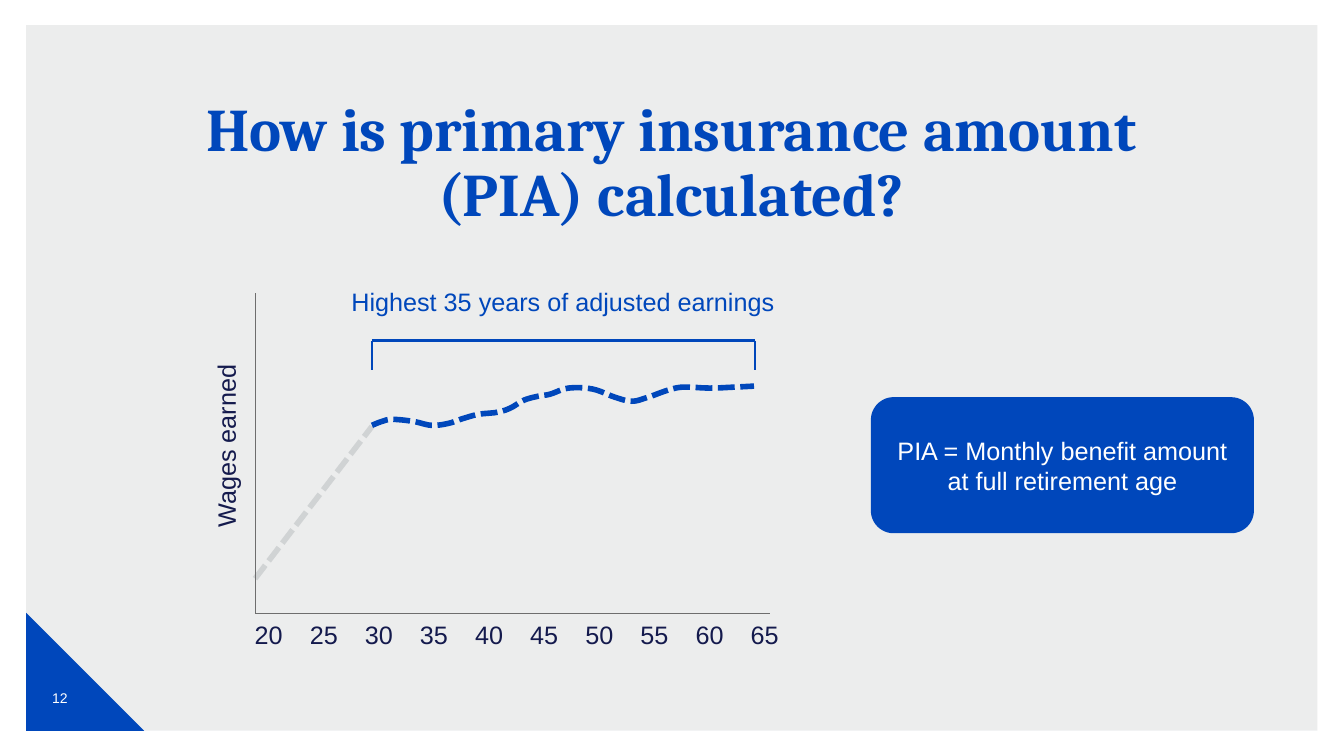
"""Build the slide that explains how the primary insurance amount is calculated."""
from lxml import etree
from pptx import Presentation
from pptx.dml.color import RGBColor
from pptx.enum.dml import MSO_LINE
from pptx.enum.shapes import MSO_CONNECTOR, MSO_SHAPE
from pptx.enum.text import MSO_ANCHOR, PP_ALIGN
from pptx.oxml.ns import qn
from pptx.util import Pt

TITLE = "How is primary insurance amount (PIA) calculated?"
BRACKET_LABEL = "Highest 35 years of adjusted earnings"
WAGES_LABEL = "Wages earned"
DEFINITION = "PIA = Monthly benefit amount at full retirement age"
SLIDE_NUMBER = "12"
AGES = range(20, 70, 5)
EARNINGS = [
    (265.7, 303.8), (272.9, 301), (280.1, 299.5), (295.2, 301), (308.2, 303.8),
    (320.4, 302.4), (331.2, 298.8), (342, 295.9), (355, 294.5), (364.3, 291.6),
    (374.4, 285.8), (384.5, 283), (393.1, 281.5), (406.1, 277.2), (423.4, 277.9),
    (439.2, 283.7), (451.4, 286.6), (463, 283.7), (477.4, 278.6), (488.2, 276.5),
    (506.9, 277.2), (524.9, 276.5), (538.6, 275.8),
]
COLORS = {"blue": "0047BB", "navy": "141A4D", "panel": "D0D3D4",
          "axis": "6E6E6E", "white": "FFFFFF"}

CENTER = PP_ALIGN.CENTER
TOP, MIDDLE = MSO_ANCHOR.TOP, MSO_ANCHOR.MIDDLE
DASH = MSO_LINE.SQUARE_DOT
STRAIGHT = MSO_CONNECTOR.STRAIGHT
RECTANGLE, ROUNDED = MSO_SHAPE.RECTANGLE, MSO_SHAPE.ROUNDED_RECTANGLE
TRIANGLE = MSO_SHAPE.RIGHT_TRIANGLE

AXIS_LEFT, AXIS_RIGHT, AXIS_TOP, AXIS_BOTTOM = 182.2, 550, 209.5, 438.5
BRACKET_LEFT, BRACKET_RIGHT, BRACKET_TOP, BRACKET_BOTTOM = 265.7, 539.3, 243.4, 264.2
AGE_LEFT, AGE_STEP, AGE_SIZE = 177.8, 39.36, 35.3
CURVE_STEPS = 6
CURVE_SCALE = 100


def rgb(name):
    return RGBColor.from_string(COLORS[name])


def write(shape, text, size=18, color="navy", font="Arial", bold=False,
          anchor=TOP, spacing=None, insets=(0, 3.6, 0, 3.6)):
    frame = shape.text_frame
    frame.word_wrap = True
    frame.vertical_anchor = anchor
    (frame.margin_left, frame.margin_top,
     frame.margin_right, frame.margin_bottom) = map(Pt, insets)
    paragraph = frame.paragraphs[0]
    paragraph.alignment = CENTER
    paragraph.line_spacing = spacing
    run = paragraph.add_run()
    run.text = text
    run.font.name = font
    run.font.size = Pt(size)
    run.font.bold = bold
    run.font.color.rgb = rgb(color)


def add_text(slide, box, text, rotation=0, **text_format):
    shape = slide.shapes.add_textbox(*map(Pt, box))
    shape.rotation = rotation
    write(shape, text, **text_format)


def add_block(slide, kind, box, color):
    shape = slide.shapes.add_shape(kind, *map(Pt, box))
    shape.shadow.inherit = False
    shape.fill.solid()
    shape.fill.fore_color.rgb = rgb(color)
    shape.line.fill.background()
    return shape


def style_line(line, color, width, dash=None):
    line.color.rgb = rgb(color)
    line.width = Pt(width)
    if dash:
        line.dash_style = dash


def add_path(slide, points, color, width, dash=None):
    for start, end in zip(points, points[1:]):
        connector = slide.shapes.add_connector(STRAIGHT, *map(Pt, start + end))
        style_line(connector.line, color, width, dash)
        etree.SubElement(connector._element.spPr, qn("a:effectLst"))


def smooth_points(points):
    padded = points[:1] + points + points[-1:]
    curve = [points[0]]
    for before, start, end, after in zip(padded, padded[1:], padded[2:], padded[3:]):
        for step in range(1, CURVE_STEPS + 1):
            t = step / CURVE_STEPS
            curve.append(tuple(
                b + t / 2 * (c - a + t * (2 * a - 5 * b + 4 * c - d
                                          + t * (3 * b - a - 3 * c + d)))
                for a, b, c, d in zip(before, start, end, after)))
    return curve


def add_curve(slide, points, color, width, dash):
    curve = [(round(x * CURVE_SCALE), round(y * CURVE_SCALE))
             for x, y in smooth_points(points)]
    builder = slide.shapes.build_freeform(*curve[0], scale=Pt(1) / CURVE_SCALE)
    builder.add_line_segments(curve[1:], close=False)
    shape = builder.convert_to_shape()
    shape.shadow.inherit = False
    shape.fill.background()
    style_line(shape.line, color, width, dash)


def main():
    presentation = Presentation()
    presentation.slide_width, presentation.slide_height = Pt(960), Pt(540)
    slide = presentation.slides.add_slide(presentation.slide_layouts[6])

    panel = add_block(slide, RECTANGLE, (18.7, 18, 922.3, 504), "panel")
    panel_color = panel._element.spPr.find(".//" + qn("a:srgbClr"))
    etree.SubElement(panel_color, qn("a:alpha"), val="40000")
    add_block(slide, TRIANGLE, (18.7, 437.8, 84.2, 84.2), "blue")
    add_text(slide, (23, 477.4, 39.6, 41.8), SLIDE_NUMBER, size=10,
             color="white", anchor=MIDDLE)
    add_text(slide, (117.4, 67, 724.3, 105.8), TITLE, size=43.2, color="blue",
             font="Cambria", bold=True, spacing=0.9)

    add_text(slide, (241.2, 200.9, 321.8, 35.3), BRACKET_LABEL, color="blue")
    add_text(slide, (55.4, 301, 218.2, 35.3), WAGES_LABEL, rotation=270)
    for index, age in enumerate(AGES):
        add_text(slide, (AGE_LEFT + index * AGE_STEP, AXIS_BOTTOM, AGE_SIZE, AGE_SIZE),
                 str(age), insets=(0, 3.6, 7.2, 3.6))

    add_path(slide, [(AXIS_LEFT, 413.3), (BRACKET_LEFT, 304.6)], "panel", 4, DASH)
    add_curve(slide, EARNINGS, "blue", 4, DASH)
    add_path(slide, [(AXIS_LEFT, AXIS_TOP), (AXIS_LEFT, AXIS_BOTTOM),
                     (AXIS_RIGHT, AXIS_BOTTOM)], "axis", 0.75)
    add_path(slide, [(BRACKET_LEFT, BRACKET_BOTTOM), (BRACKET_LEFT, BRACKET_TOP),
                     (BRACKET_RIGHT, BRACKET_TOP), (BRACKET_RIGHT, BRACKET_BOTTOM)],
             "blue", 2)

    definition = add_block(slide, ROUNDED, (622.1, 283.7, 273.6, 97.2), "blue")
    write(definition, DEFINITION, color="white", anchor=MIDDLE,
          insets=(7.2, 3.6, 7.2, 3.6))

    presentation.save("out.pptx")


if __name__ == "__main__":
    main()
